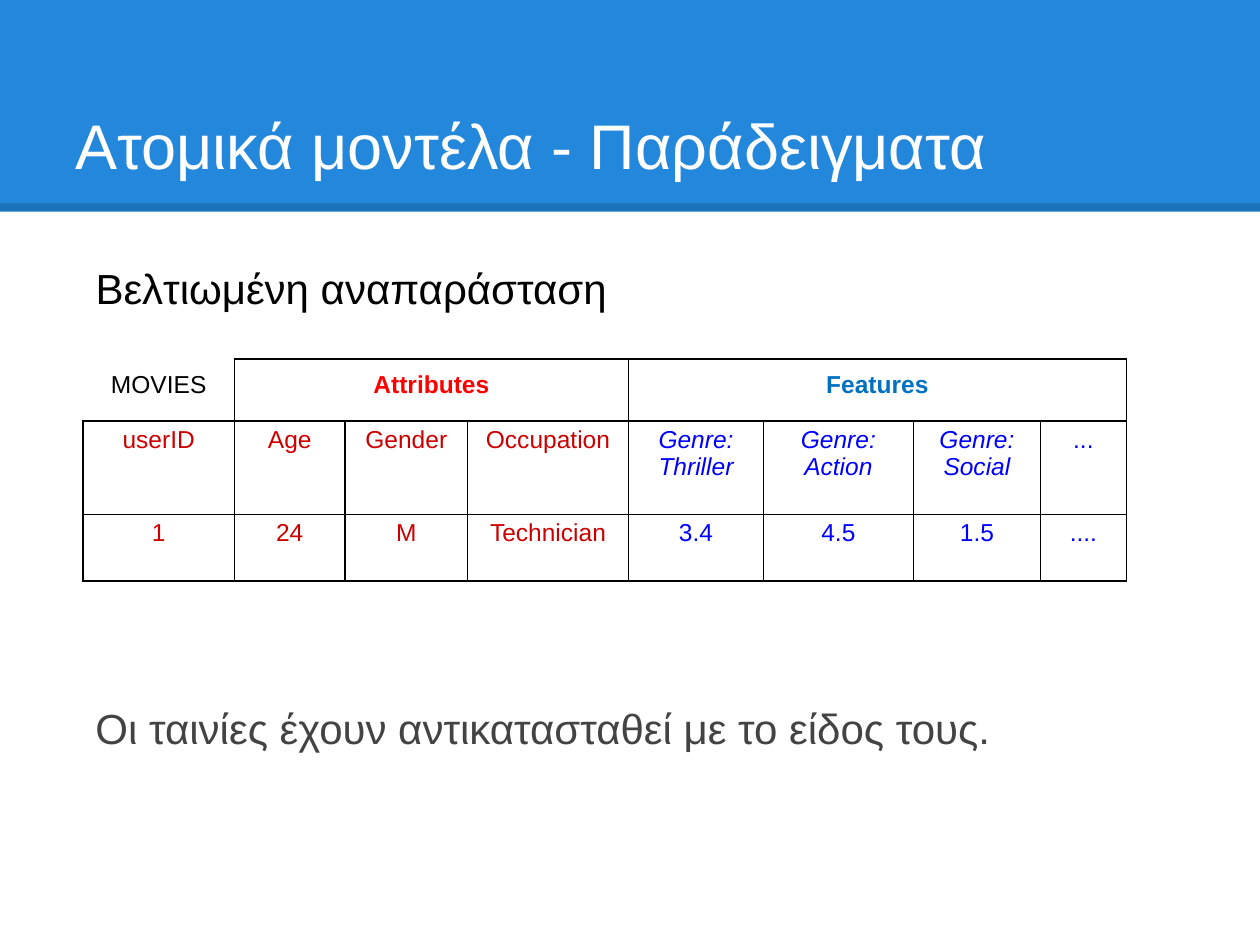
from lxml import etree
from pptx import Presentation
from pptx import util as u
from pptx.dml.color import RGBColor
from pptx.enum import shapes, text
from pptx.oxml import ns

W, H = u.Inches(10), u.Inches(7.5)
BLUE = RGBColor(0x23, 0x88, 0xDB)
WHITE = RGBColor(0xFF, 0xFF, 0xFF)
BLACK = RGBColor(0, 0, 0)
GREY = RGBColor(0x43, 0x43, 0x43)
RED = RGBColor(0xFF, 0, 0)
DARK_RED = RGBColor(0xCC, 0, 0)
FEATURE_BLUE = RGBColor(0, 0x70, 0xC0)
VALUE_BLUE = RGBColor(0, 0, 0xFF)

COLS = [1.2, 0.88, 0.97, 1.28, 1.07, 1.19, 1.01, 0.68]
ROWS = [0.49, 0.74, 0.53]
HEADS = [(0, 0, "MOVIES", BLACK), (1, 3, "Attributes", RED), (4, 7, "Features", FEATURE_BLUE)]
BODY = [
    ["userID", "Age", "Gender", "Occupation", "Genre: Thriller", "Genre: Action", "Genre: Social", "..."],
    ["1", "24", "M", "Technician", "3.4", "4.5", "1.5", "...."],
]


def share(x, y, w, h):
    return int(x * W), int(y * H), int(w * W), int(h * H)


def set_text(tf, words, size, color, align=text.PP_ALIGN.LEFT, bold=False, italic=False):
    tf.text = words
    p = tf.paragraphs[0]
    p.alignment = align
    f = p.runs[0].font
    f.name, f.size, f.bold, f.italic = "Arial", u.Pt(size), bold, italic
    f.color.rgb = color


def set_margins(obj, x, y):
    obj.margin_left = obj.margin_right = u.Inches(x)
    obj.margin_top = obj.margin_bottom = u.Inches(y)


def add_header(s, box, words):
    x, y, w, h = box
    band = s.shapes.add_shape(shapes.MSO_SHAPE.RECTANGLE, *box)
    band.shadow.inherit = False
    band.fill.solid()
    band.fill.fore_color.rgb = BLUE
    band.line.fill.background()

    rule_y = y + int(h * 0.98)
    rule = s.shapes.add_connector(shapes.MSO_CONNECTOR.STRAIGHT, x, rule_y, x + w, rule_y)
    rule.line.width = u.Pt(4.5)
    rule.line.color.rgb = BLACK
    sp_pr = rule.element.spPr
    color = sp_pr.find(".//" + ns.qn("a:srgbClr"))
    etree.SubElement(color, ns.qn("a:alpha"), val="15000")
    etree.SubElement(sp_pr, ns.qn("a:effectLst"))

    title = s.shapes.title
    title.left, title.top = x + int(w * 0.05), y + int(h * 0.18)
    title.width, title.height = int(w * 0.9), int(h * 0.74)
    tf = title.text_frame
    tf.vertical_anchor = text.MSO_ANCHOR.BOTTOM
    tf.word_wrap = True
    set_margins(tf, 0.1, 0.1)
    set_text(tf, words, 36, WHITE)
    s.shapes.element.append(title.element)


def add_note(s, box, words, color):
    tf = s.shapes.add_textbox(*box).text_frame
    tf.word_wrap = True
    set_margins(tf, 0.1, 0.1)
    set_text(tf, words, 24, color)


def set_borders(cell, hidden=()):
    tc_pr = cell._tc.get_or_add_tcPr()
    for i, side in enumerate("LRTB"):
        ln = etree.Element(ns.qn(f"a:ln{side}"), w=str(u.Pt(1)))
        if side in hidden:
            etree.SubElement(ln, ns.qn("a:noFill"))
        else:
            fill = etree.SubElement(ln, ns.qn("a:solidFill"))
            etree.SubElement(fill, ns.qn("a:srgbClr"), val=str(BLACK))
        tc_pr.insert(i, ln)


def add_ratings(s, box):
    x, y, w, h = box
    t = s.shapes.add_table(len(ROWS), len(COLS), *box).table
    t.first_row = t.horz_banding = False
    for col, part in zip(t.columns, COLS):
        col.width = int(w * part / sum(COLS))
    for row, part in zip(t.rows, ROWS):
        row.height = int(h * part / sum(ROWS))
    for i in range(len(ROWS)):
        for j in range(len(COLS)):
            cell = t.cell(i, j)
            cell.fill.background()
            set_borders(cell, "LT" if i == j == 0 else "")
    for first, last, words, color in HEADS:
        cell = t.cell(0, first)
        if last > first:
            cell.merge(t.cell(0, last))
        set_margins(cell, 0.07, 0.1)
        set_text(cell.text_frame, words, 14, color, text.PP_ALIGN.CENTER, bold=last > first)
    for i, values in enumerate(BODY, 1):
        for j, words in enumerate(values):
            cell = t.cell(i, j)
            set_margins(cell, 0.04, 0.04)
            set_text(cell.text_frame, words, 14, DARK_RED if j < 4 else VALUE_BLUE,
                     text.PP_ALIGN.CENTER, italic=words.startswith("Genre"))


def main():
    prs = Presentation()
    prs.slide_width, prs.slide_height = W, H
    s = prs.slides.add_slide(prs.slide_layouts[5])
    add_header(s, share(0, 0, 1, 0.224), "Ατομικά μοντέλα - Παράδειγματα")
    add_note(s, share(0.066, 0.265, 0.818, 0.08), "Βελτιωμένη αναπαράσταση", BLACK)
    add_ratings(s, share(0.066, 0.38, 0.828, 0.235))
    add_note(s, share(0.066, 0.73, 0.844, 0.2),
             "Οι ταινίες έχουν αντικατασταθεί με το είδος τους.", GREY)
    prs.save("out.pptx")


if __name__ == "__main__":
    main()
